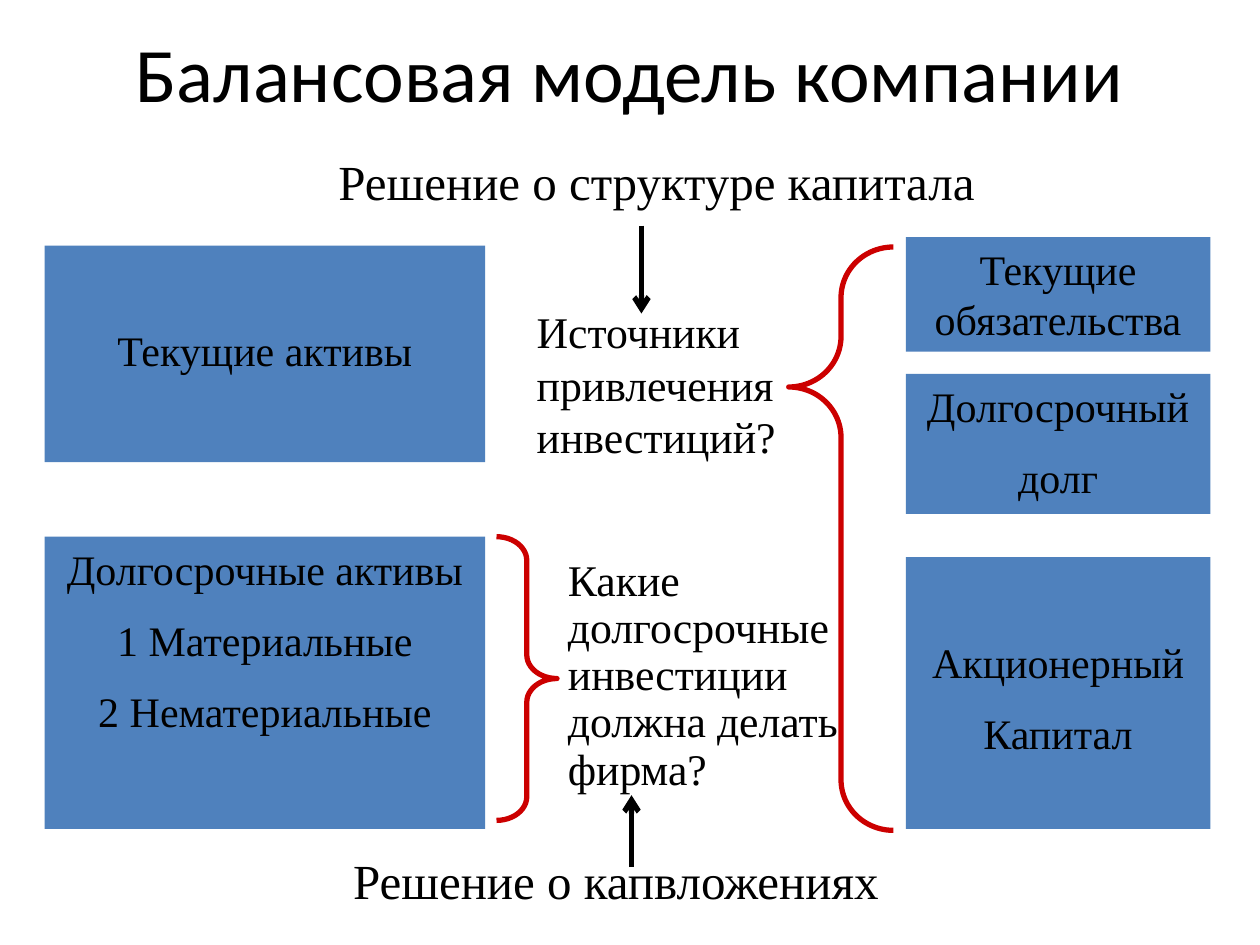
from lxml import etree
from pptx import Presentation
from pptx import util as u
from pptx.dml.color import RGBColor
from pptx.enum import shapes, text
from pptx.oxml.ns import qn

# Content: lengths in cm
BLACK, BLUE, RED = "000000", "4F81BD", "CC0000"
SERIF = "Times New Roman"
LOW = 1.6  # top inset that lowers the text in a tall box

TITLE = "Балансовая модель компании"
LEFT_COL, RIGHT_COL = (0.9, 8.88), (18.26, 6.14)  # left, width
BOXES = [  # column, top, height, top inset, lines
    (LEFT_COL, 4.95, 4.37, LOW, ["Текущие активы"]),
    (LEFT_COL, 10.82, 5.89, 0.13,
     ["Долгосрочные активы", "1 Материальные", "2 Нематериальные"]),
    (RIGHT_COL, 4.78, 2.31, 0.13, ["Текущие обязательства"]),
    (RIGHT_COL, 7.54, 2.82, 0.13, ["Долгосрочный", "долг"]),
    (RIGHT_COL, 11.23, 5.48, LOW, ["Акционерный", "Капитал"]),
]
DECISIONS = [  # place, text
    ((2.34, 2.92, 21.79, 1.45), "Решение о структуре капитала"),
    ((1.52, 17.02, 21.79, 1.45), "Решение о капвложениях"),
]
QUESTIONS = [  # place, left inset, line spacing, text
    ((10.57, 6.02, 6.78, 3.45), 0.25, 1.0, "Источники привлечения инвестиций?"),
    ((9.93, 11.13, 7.42, 5.08), 1.52, 0.9,
     "Какие долгосрочные инвестиции должна делать фирма?"),
]
BRACES = [  # preset, place, adjustments
    (shapes.MSO_SHAPE.RIGHT_BRACE, (10.01, 10.82, 1.22, 5.72), (0.391, 0.5)),
    (shapes.MSO_SHAPE.LEFT_BRACE, (15.9, 4.98, 2.11, 11.76), (0.483, 0.24)),
]
ARROWS = [(12.93, 4.55, 6.32), (12.73, 17.48, 16.03)]  # x, from y, to y


def color(hex_code):
    return RGBColor.from_string(hex_code)


def cm(place):
    return [u.Cm(v) for v in place]


def write(s, lines, size=24, font=SERIF, align=text.PP_ALIGN.CENTER,
          anchor=text.MSO_ANCHOR.TOP, top=0.13, left=0.25, gap=0, spacing=None):
    tf = s.text_frame
    tf.word_wrap = True
    tf.auto_size = text.MSO_AUTO_SIZE.NONE
    tf.vertical_anchor = anchor
    tf.margin_top, tf.margin_left = u.Cm(top), u.Cm(left)
    for i, line in enumerate(lines):
        p = tf.add_paragraph() if i else tf.paragraphs[0]
        p.alignment = align
        p.space_before = u.Pt(gap if i else 0)
        if spacing:
            p.line_spacing = spacing
        r = p.add_run()
        r.text = line
        r.font.size, r.font.name = u.Pt(size), font
        r.font.color.rgb = color(BLACK)


def set_line(s, hex_code):
    s.line.color.rgb = color(hex_code)
    s.line.width = u.Pt(3)


prs = Presentation()
prs.slide_width, prs.slide_height = u.Cm(25.4), u.Cm(19.05)
slide = prs.slides.add_slide(prs.slide_layouts[5])
sh = slide.shapes

# Title
s = sh.title
s.left, s.top, s.width, s.height = cm((1.27, 0.33, 22.86, 2.21))
write(s, [TITLE], size=44, font="Calibri", anchor=text.MSO_ANCHOR.MIDDLE)

# Balance sheet boxes
for (left, width), y, height, top, lines in BOXES:
    s = sh.add_shape(shapes.MSO_SHAPE.RECTANGLE, *cm((left, y, width, height)))
    s.shadow.inherit = False
    s.fill.solid()
    s.fill.fore_color.rgb = color(BLUE)
    s.line.fill.background()
    write(s, lines, top=top, gap=12)

# Decisions and questions
for place, line in DECISIONS:
    write(sh.add_textbox(*cm(place)), [line], size=28)
for place, left, spacing, line in QUESTIONS:
    write(sh.add_textbox(*cm(place)), [line], size=25, left=left,
          spacing=spacing, align=text.PP_ALIGN.LEFT)

# Braces
for preset, place, adjustments in BRACES:
    s = sh.add_shape(preset, *cm(place))
    s.shadow.inherit = False
    s.fill.background()
    set_line(s, RED)
    for i, value in enumerate(adjustments):
        s.adjustments[i] = value

# Arrows
for x, start, end in ARROWS:
    s = sh.add_connector(shapes.MSO_CONNECTOR.STRAIGHT, *cm((x, start, x, end)))
    set_line(s, BLACK)
    etree.SubElement(s.line._get_or_add_ln(), qn("a:tailEnd"), type="arrow")
    etree.SubElement(s._element.spPr, qn("a:effectLst"))

prs.save("out.pptx")
